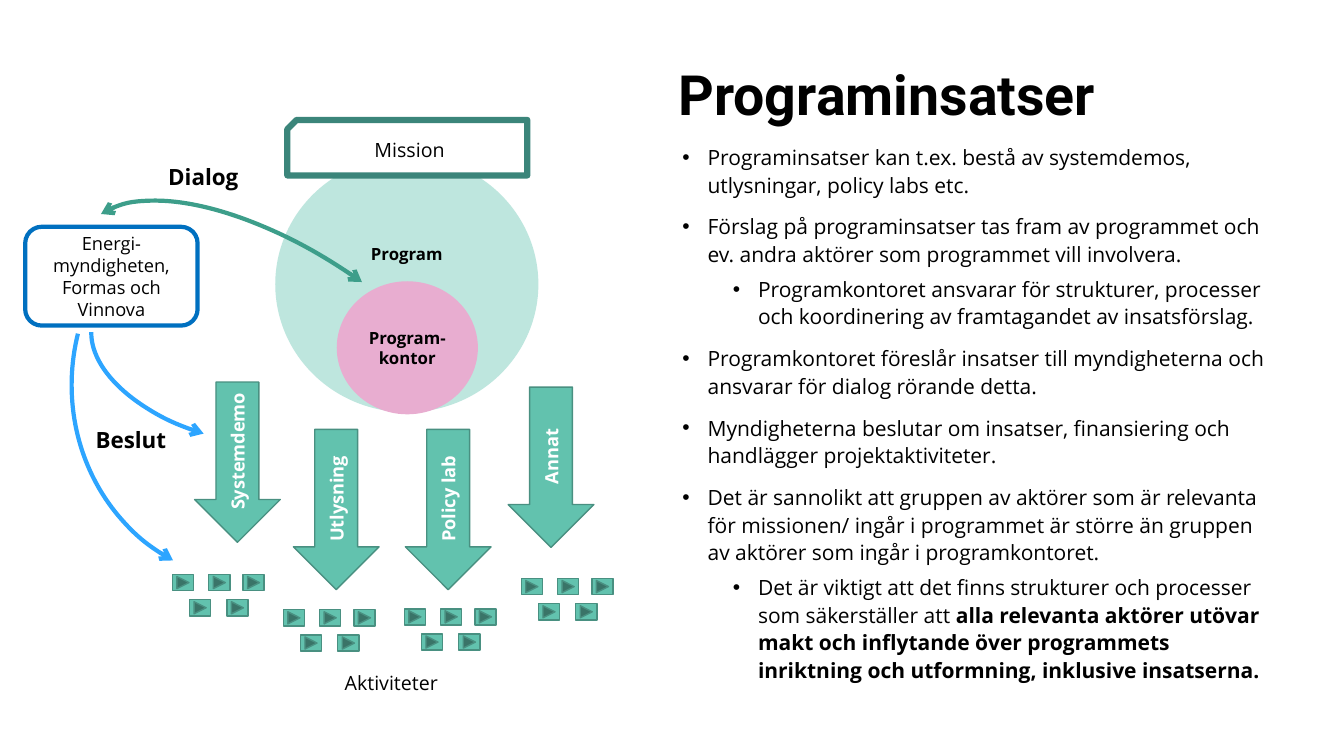
from lxml.etree import SubElement
from pptx import Presentation
from pptx.dml.color import RGBColor
from pptx.enum.shapes import MSO_SHAPE
from pptx.enum.text import MSO_ANCHOR, MSO_AUTO_SIZE, PP_ALIGN
from pptx.oxml.ns import qn
from pptx.util import Inches, Pt

BLACK = RGBColor(0x00, 0x00, 0x00)
WHITE = RGBColor(0xFF, 0xFF, 0xFF)
MINT = RGBColor(0xBE, 0xE6, 0xDE)
PINK = RGBColor(0xE8, 0xAD, 0xD0)
DARK_TEAL = RGBColor(0x3B, 0x85, 0x7A)
TEAL = RGBColor(0x62, 0xC2, 0xAE)
TEAL_EDGE = RGBColor(0x49, 0x90, 0x81)
DIALOG_GREEN = RGBColor(0x3D, 0x9E, 0x8A)
AGENCY_BLUE = RGBColor(0x00, 0x70, 0xC0)
DECISION_BLUE = RGBColor(0x2D, 0xA5, 0xFF)

BULLETS = [
    (0, "Programinsatser kan t.ex. bestå av systemdemos, utlysningar, policy labs etc.", ""),
    (0, "Förslag på programinsatser tas fram av programmet och ev. andra aktörer som "
        "programmet vill involvera.", ""),
    (1, "Programkontoret ansvarar för strukturer, processer och koordinering av "
        "framtagandet av insatsförslag.", ""),
    (0, "Programkontoret föreslår insatser till myndigheterna och ansvarar för dialog "
        "rörande detta.", ""),
    (0, "Myndigheterna beslutar om insatser, finansiering och handlägger "
        "projektaktiviteter.", ""),
    (0, "Det är sannolikt att gruppen av aktörer som är relevanta för missionen/ ingår i "
        "programmet är större än gruppen av aktörer som ingår i programkontoret.", ""),
    (1, "Det är viktigt att det finns strukturer och processer som säkerställer att ",
        "alla relevanta aktörer utövar makt och inflytande över programmets inriktning "
        "och utformning, inklusive insatserna."),
]
ARROWS = [("Systemdemo", 1.93, 3.79), ("Annat", 5.04, 3.84),
          ("Utlysning", 2.91, 4.26), ("Policy lab", 4.02, 4.26)]
ACTIVITY_GROUPS = [(1.71, 5.7), (5.17, 5.74), (2.81, 6.05), (4.01, 6.04)]
ACTIVITY_OFFSETS = [(0, 0), (0.36, 0), (0.7, 0), (0.17, 0.25), (0.54, 0.25)]


class SlideBuilder:
    heading_font = "Roboto"
    body_font = "Open Sans"

    def __init__(self, slide):
        self.slide = slide

    def style(self, paragraph, size, bold=False, color=BLACK, name=None):
        font = paragraph.font
        font.name = name or self.body_font
        font.size = Pt(size)
        font.bold = bold
        font.color.rgb = color

    def title(self, text, left, top, width, height):
        title = self.slide.shapes.title
        title.left, title.top = Inches(left), Inches(top)
        title.width, title.height = Inches(width), Inches(height)
        frame = title.text_frame
        frame.text = text
        frame.auto_size = MSO_AUTO_SIZE.NONE
        frame.vertical_anchor = MSO_ANCHOR.BOTTOM
        paragraph = frame.paragraphs[0]
        paragraph.alignment = PP_ALIGN.LEFT
        paragraph.line_spacing = 0.9
        self.style(paragraph, 39.6, True, name=self.heading_font)

    def text_box(self, left, top, width, height, wrap=True):
        box = self.slide.shapes.add_textbox(
            Inches(left), Inches(top), Inches(width), Inches(height))
        box.text_frame.word_wrap = wrap
        return box.text_frame

    def label(self, text, left, top, width, height, size, bold=False, wrap=True, spacing=0.9):
        frame = self.text_box(left, top, width, height, wrap)
        frame.text = text
        frame.paragraphs[0].line_spacing = spacing
        self.style(frame.paragraphs[0], size, bold)

    def bullet_list(self, items, left, top, width, height):
        frame = self.text_box(left, top, width, height)
        for index, (level, text, emphasis) in enumerate(items):
            paragraph = frame.paragraphs[0] if index == 0 else frame.add_paragraph()
            paragraph.level = level
            paragraph.line_spacing = 1.1
            if index:
                paragraph.space_before = Pt(5 if level else 10)
            properties = paragraph._p.get_or_add_pPr()
            properties.set("marL", str(Inches(0.25 + 0.5 * level)))
            properties.set("indent", str(-Inches(0.25)))
            SubElement(properties, qn("a:buFont"), typeface="Arial")
            SubElement(properties, qn("a:buChar"), char="•")
            self.style(paragraph, 15)
            paragraph.add_run().text = text
            if emphasis:
                run = paragraph.add_run()
                run.text = emphasis
                run.font.bold = True

    def shape(self, kind, left, top, width, height, fill=None, line=None, line_width=1):
        shape = self.slide.shapes.add_shape(
            kind, Inches(left), Inches(top), Inches(width), Inches(height))
        shape.shadow.inherit = False
        if fill is None:
            shape.fill.background()
        else:
            shape.fill.solid()
            shape.fill.fore_color.rgb = fill
        if line is None:
            shape.line.fill.background()
        else:
            shape.line.color.rgb = line
            shape.line.width = Pt(line_width)
        return shape

    def caption(self, shape, text, size, bold=False, color=BLACK):
        frame = shape.text_frame
        frame.text = text
        frame.word_wrap = True
        frame.vertical_anchor = MSO_ANCHOR.MIDDLE
        frame.paragraphs[0].alignment = PP_ALIGN.CENTER
        self.style(frame.paragraphs[0], size, bold, color)
        return frame

    def block_arrow(self, text, left, top):
        arrow = self.shape(MSO_SHAPE.DOWN_ARROW, left, top, 0.85, 1.59, TEAL, TEAL_EDGE)
        frame = self.caption(arrow, text, 13, True, WHITE)
        frame._txBody.bodyPr.set("vert", "vert270")

    def arc(self, left, top, width, height, rotation, start, color, ends, flip=False):
        arc = self.shape(MSO_SHAPE.ARC, left, top, width, height, None, color, 3)
        arc.adjustments[0] = start
        arc.adjustments[1] = 213.41
        arc.rotation = rotation
        if flip:
            self.flip(arc, "flipV")
        line = arc.line._get_or_add_ln()
        for end in ends:
            SubElement(line, qn(f"a:{end}"), type="arrow")

    def flip(self, shape, direction):
        shape.element.spPr.xfrm.set(direction, "1")


def main():
    presentation = Presentation()
    presentation.slide_width = Inches(13.33)
    presentation.slide_height = Inches(7.5)
    slide = presentation.slides.add_slide(presentation.slide_layouts[5])
    builder = SlideBuilder(slide)

    builder.title("Programinsatser", 6.63, 0.64, 6.42, 0.67)
    builder.bullet_list(BULLETS, 6.67, 1.36, 6.06, 5.83)

    program = builder.shape(MSO_SHAPE.OVAL, 2.73, 1.55, 2.61, 2.54, MINT)
    builder.caption(program, "Program", 12, True).margin_bottom = Inches(0.65)
    office = builder.shape(MSO_SHAPE.OVAL, 3.34, 2.79, 1.4, 1.32, PINK)
    builder.caption(office, "Program-kontor", 12, True)
    mission = builder.shape(MSO_SHAPE.SNIP_1_RECTANGLE, 2.85, 1.19, 2.38, 0.55,
                            WHITE, DARK_TEAL, 4.5)
    builder.flip(mission, "flipH")
    builder.caption(mission, "Mission", 14)

    for group_left, group_top in ACTIVITY_GROUPS:
        for across, down in ACTIVITY_OFFSETS:
            builder.shape(MSO_SHAPE.ACTION_BUTTON_FORWARD_OR_NEXT, group_left + across,
                          group_top + down, 0.21, 0.16, TEAL, TEAL_EDGE)
    for text, left, top in ARROWS:
        builder.block_arrow(text, left, top)

    agencies = builder.shape(MSO_SHAPE.ROUNDED_RECTANGLE, 0.25, 2.25, 1.71, 0.98,
                             None, AGENCY_BLUE, 3)
    builder.caption(agencies, "Energi-myndigheten, Formas och Vinnova", 13)

    builder.arc(0.35, 2.63, 5.25, 2.36, 216.2, 164.94, DIALOG_GREEN,
                ["headEnd", "tailEnd"], flip=True)
    builder.arc(0.72, 1.73, 3.86, 4.06, 197.8, 167.77, DECISION_BLUE, ["headEnd"])
    builder.arc(0.87, 2.78, 2.86, 1.57, 195.3, 165.33, DECISION_BLUE, ["headEnd"])

    builder.label("Dialog", 1.57, 1.6, 1.02, 0.57, 16, True)
    builder.label("Beslut", 0.85, 4.21, 1.02, 0.57, 16, True)
    builder.label("Aktiviteter", 3.32, 6.61, 1.14, 0.34, 14, wrap=False, spacing=1.0)

    presentation.save("out.pptx")


if __name__ == "__main__":
    main()
